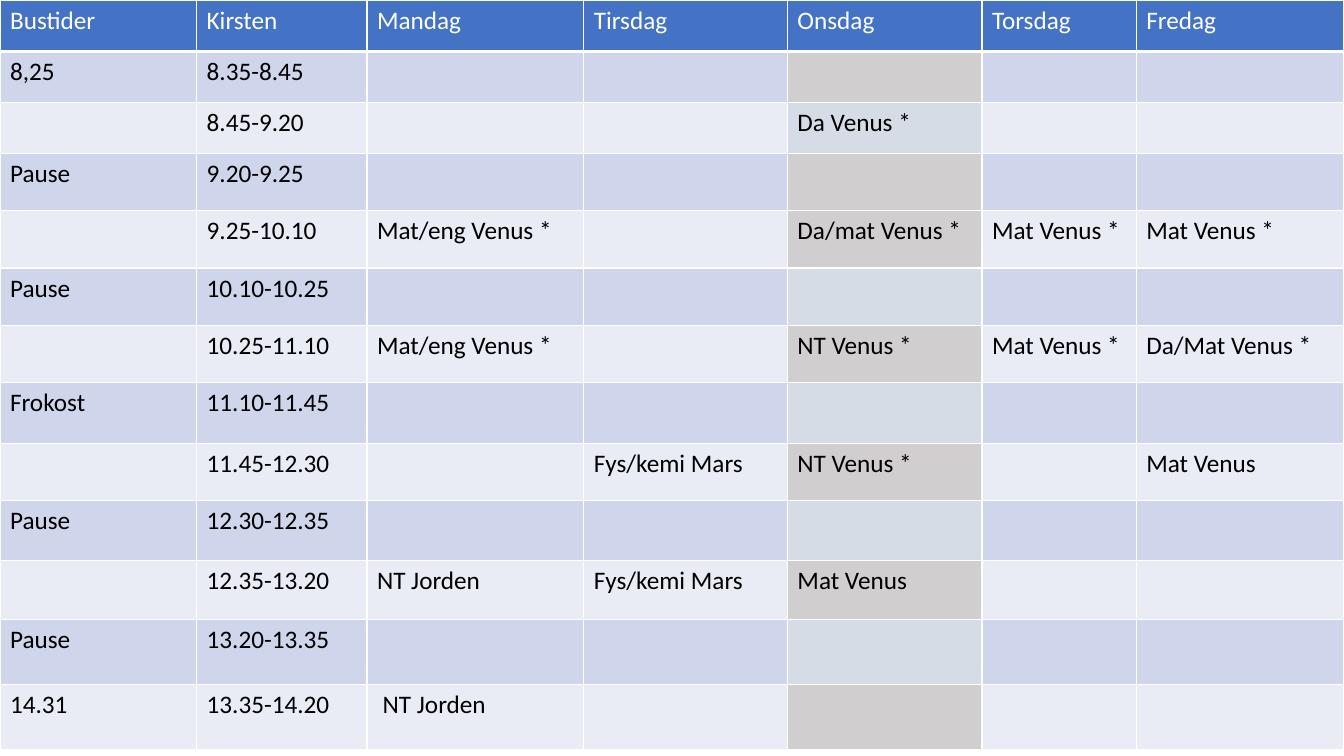
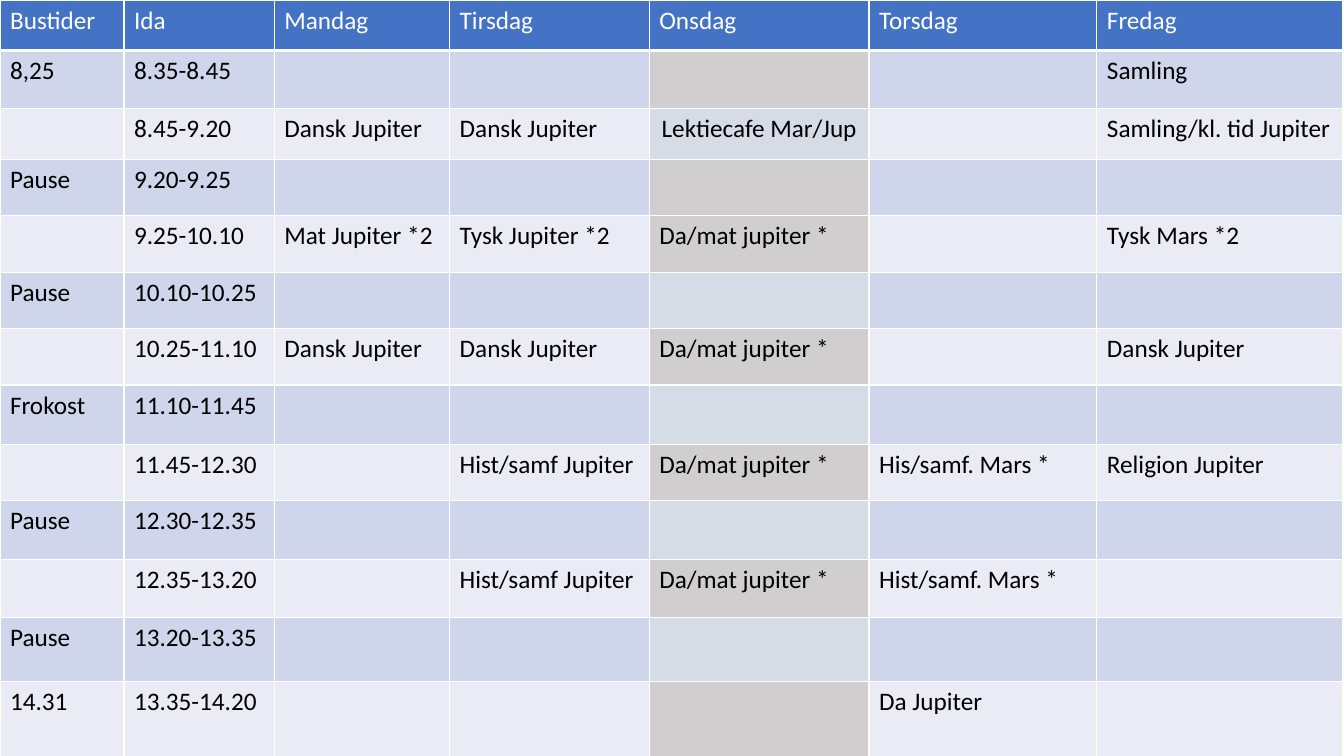
from dataclasses import dataclass

from lxml.etree import SubElement
from pptx import Presentation
from pptx.dml.color import RGBColor
from pptx.enum.text import PP_ALIGN as Align
from pptx.oxml.ns import qn
from pptx.presentation import Presentation as Deck
from pptx.table import _Cell as Cell
from pptx.util import Emu, Pt

# Shared measures and style
EMU_PER_PX = 9144  # 100 px to the inch
PAGE_WIDTH, PAGE_HEIGHT = 1333, 750
FONT, TEXT_SIZE = "Calibri", 18
WHITE, BLACK = "FFFFFF", "000000"
HEADER_FILL = "4472C4"
BAND_FILLS = ("E9EBF5", "CFD5EA")  # even rows, odd rows
WEDNESDAY_GREY, WEDNESDAY_BLUE = "D0CECE", "D6DCE5"
WEDNESDAY_BLUE_ROWS = {2, 5, 7, 9, 11}
THIN, THICK = 1, 3

# Shared timetable frame
DAYS = ("Mandag", "Tirsdag", "Onsdag", "Torsdag", "Fredag")
WEDNESDAY_COLUMN = 2 + DAYS.index("Onsdag")
PERIODS = (
    ("8,25", "8.35-8.45"),
    ("", "8.45-9.20"),
    ("Pause", "9.20-9.25"),
    ("", "9.25-10.10"),
    ("Pause", "10.10-10.25"),
    ("", "10.25-11.10"),
    ("Frokost", "11.10-11.45"),
    ("", "11.45-12.30"),
    ("Pause", "12.30-12.35"),
    ("", "12.35-13.20"),
    ("Pause", "13.20-13.35"),
    ("14.31", "13.35-14.20"),
)


@dataclass(frozen=True)
class Timetable:
    teacher: str
    column_widths: tuple[int, ...]
    row_heights: tuple[int, ...]
    lessons: dict[str, tuple[str, ...]]  # start of the period: one text per day
    centred: tuple[str, ...] = ()

    def rows(self) -> list[tuple[str, ...]]:
        free = ("",) * len(DAYS)
        body = [
            (label, time, *self.lessons.get(time.split("-")[0], free))
            for label, time in PERIODS
        ]
        return [("Bustider", self.teacher, *DAYS), *body]


TIMETABLES = (
    Timetable(
        teacher="Kirsten",
        column_widths=(195, 169, 215, 202, 193, 153, 206),
        row_heights=(51, 51, 50, 57, 57, 57, 57, 60, 57, 59, 59, 64, 65),
        lessons={
            "8.45": ("", "", "Da Venus *", "", ""),
            "9.25": ("Mat/eng Venus *", "", "Da/mat Venus *", "Mat Venus *", "Mat Venus *"),
            "10.25": ("Mat/eng Venus *", "", "NT Venus *", "Mat Venus *", "Da/Mat Venus *"),
            "11.45": ("", "Fys/kemi Mars", "NT Venus *", "", "Mat Venus"),
            "12.35": ("NT Jorden", "Fys/kemi Mars", "Mat Venus", "", ""),
            "13.35": (" NT Jorden", "", "", "", ""),
        },
    ),
    Timetable(
        teacher="Ida",
        column_widths=(123, 149, 174, 198, 218, 226, 244),
        row_heights=(50, 58, 50, 56, 56, 56, 56, 59, 56, 58, 58, 63, 75),
        lessons={
            "8.35": ("", "", "", "", "Samling"),
            "8.45": ("Dansk Jupiter", "Dansk Jupiter", "Lektiecafe Mar/Jup ", "",
                     "Samling/kl. tid Jupiter"),
            "9.25": ("Mat Jupiter *2", "Tysk Jupiter *2", "Da/mat jupiter *", "", "Tysk Mars *2"),
            "10.25": ("Dansk Jupiter", "Dansk Jupiter", "Da/mat jupiter *", "", "Dansk Jupiter"),
            "11.45": ("", "Hist/samf Jupiter", "Da/mat jupiter *", "His/samf. Mars *",
                      "Religion Jupiter"),
            "12.35": ("", "Hist/samf Jupiter", "Da/mat jupiter *", "Hist/samf. Mars *", ""),
            "13.35": ("", "", "", "Da Jupiter", ""),
        },
        centred=("Lektiecafe Mar/Jup ",),
    ),
)


def px(length: int) -> Emu:
    return Emu(length * EMU_PER_PX)


def color(value: str) -> RGBColor:
    return RGBColor.from_string(value)


def cell_fill(row: int, column: int) -> str:
    if row == 0:
        return HEADER_FILL
    if column == WEDNESDAY_COLUMN:
        return WEDNESDAY_BLUE if row in WEDNESDAY_BLUE_ROWS else WEDNESDAY_GREY
    return BAND_FILLS[row % 2]


def set_borders(cell: Cell, bottom: int) -> None:
    """Draw white borders; they must come before the fill in the cell properties."""
    properties = cell._tc.get_or_add_tcPr()
    widths = {"a:lnL": THIN, "a:lnR": THIN, "a:lnT": THIN, "a:lnB": bottom}
    for position, (side, width) in enumerate(widths.items()):
        line = SubElement(properties, qn(side), w=str(Pt(width)))
        SubElement(SubElement(line, qn("a:solidFill")), qn("a:srgbClr"), val=WHITE)
        properties.insert(position, line)


def set_text(cell: Cell, text: str, ink: str, centred: bool) -> None:
    cell.text_frame.text = text
    para = cell.text_frame.paragraphs[0]
    para.alignment = Align.CENTER if centred else Align.LEFT
    for span in para.runs:
        span.font.name = FONT
        span.font.size = Pt(TEXT_SIZE)
        span.font.bold = False
        span.font.color.rgb = color(ink)


def draw_timetable(deck: Deck, timetable: Timetable) -> None:
    page = deck.slides.add_slide(deck.slide_layouts[6])
    rows = timetable.rows()
    widths, heights = timetable.column_widths, timetable.row_heights
    table = page.shapes.add_table(
        len(rows), len(widths), 0, 0, px(sum(widths)), px(sum(heights))
    ).table
    table.horz_banding = False

    for column, width in zip(table.columns, widths):
        column.width = px(width)
    for row, height in zip(table.rows, heights):
        row.height = px(height)

    for row_index, texts in enumerate(rows):
        is_header = row_index == 0
        for column_index, text in enumerate(texts):
            cell = table.cell(row_index, column_index)
            cell.fill.solid()
            cell.fill.fore_color.rgb = color(cell_fill(row_index, column_index))
            set_borders(cell, THICK if is_header else THIN)
            if text:
                set_text(cell, text, WHITE if is_header else BLACK, text in timetable.centred)


def main() -> None:
    deck = Presentation()
    deck.slide_width, deck.slide_height = px(PAGE_WIDTH), px(PAGE_HEIGHT)
    for timetable in TIMETABLES:
        draw_timetable(deck, timetable)
    deck.save("out.pptx")


if __name__ == "__main__":
    main()
